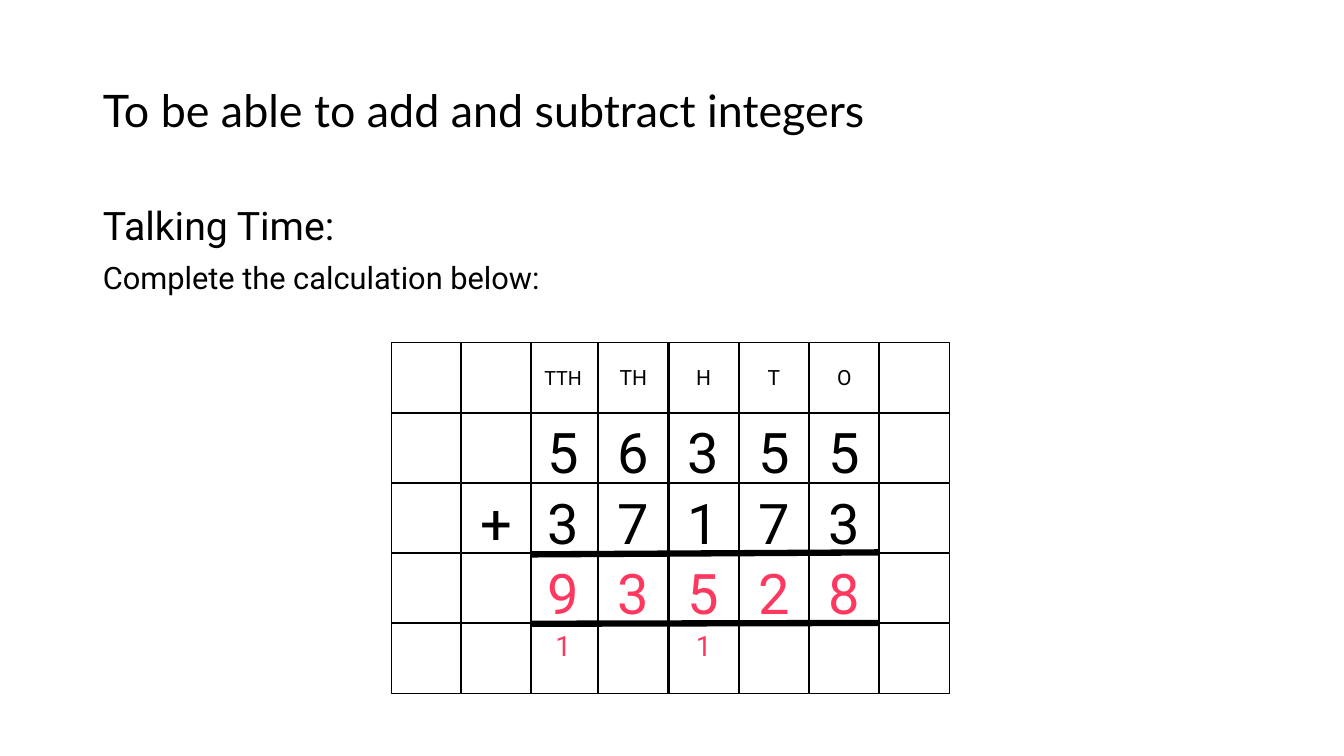
from dataclasses import dataclass

from lxml import etree
from pptx import Presentation
from pptx.dml.color import RGBColor
from pptx.enum.shapes import MSO_CONNECTOR, MSO_SHAPE
from pptx.enum.text import MSO_ANCHOR, MSO_AUTO_SIZE, PP_ALIGN
from pptx.oxml.ns import qn
from pptx.util import Inches, Pt

LEFT, CENTER = PP_ALIGN.LEFT, PP_ALIGN.CENTER
TOP, MIDDLE = MSO_ANCHOR.TOP, MSO_ANCHOR.MIDDLE
RECTANGLE, STRAIGHT = MSO_SHAPE.RECTANGLE, MSO_CONNECTOR.STRAIGHT
NO_AUTOFIT = MSO_AUTO_SIZE.NONE

TITLE = "To be able to add and subtract integers"
HEADING = "Talking Time:"
INSTRUCTION = "Complete the calculation below:"
MARGIN_COLUMNS = [["", ""], ["", ""], ["", "+"], ["", ""], ["", ""]]
PLACE_COLUMNS = [
    ["TTH", "TH", "H", "T", "O", ""],
    ["5", "6", "3", "5", "5", ""],
    ["3", "7", "1", "7", "3", ""],
    ["9", "3", "5", "2", "8", ""],
    ["1", "", "1", "", "", ""],
]
RULES = [((4.58, 6.19), (8.72, 6.18)), ((5.24, 5.5), (8.72, 5.48))]

TITLE_AREA = (0.92, 0.4, 9.6, 1.45)
BODY_AREA = (0.92, 2, 11.5, 4.76)
MARGIN_LEFT, PLACE_LEFT, GRID_TOP = 3.88, 5.24, 3.4
PITCH, CELL = 0.697, 0.69


@dataclass(frozen=True)
class Theme:
    title_font: str = "Lato"
    font: str = "Roboto"
    ink: RGBColor = RGBColor(0x00, 0x00, 0x00)
    paper: RGBColor = RGBColor(0xFF, 0xFF, 0xFF)
    answer: RGBColor = RGBColor(0xFF, 0x38, 0x60)
    title_size: float = 32
    heading_size: float = 28
    instruction_size: float = 22
    wide_label_size: float = 14
    label_size: float = 15
    digit_size: float = 40
    carry_size: float = 20
    cell_line: float = 1
    rule_line: float = 4.5


THEME = Theme()
ROW_FORMATS = [
    dict(size=THEME.label_size, anchor=MIDDLE),
    dict(size=THEME.digit_size),
    dict(size=THEME.digit_size),
    dict(size=THEME.digit_size, color=THEME.answer),
    dict(size=THEME.carry_size, color=THEME.answer),
]


def write(frame, text, size, font=THEME.font, color=THEME.ink, align=CENTER,
          anchor=TOP, spacing=1.0, before=0, add=False):
    frame.word_wrap = True
    frame.auto_size = NO_AUTOFIT
    frame.vertical_anchor = anchor
    para = frame.add_paragraph() if add else frame.paragraphs[0]
    para.alignment = align
    para.line_spacing = spacing
    para.space_before = Pt(before)
    span = para.add_run()
    span.text = text
    span.font.size = Pt(size)
    span.font.name = font
    span.font.color.rgb = color
    return para


def place(box, area):
    box.left, box.top, box.width, box.height = map(Inches, area)


def remove_bullet(para):
    properties = para._p.get_or_add_pPr()
    properties.set("marL", "0")
    properties.set("indent", "0")
    etree.SubElement(properties, qn("a:buNone"))


def draw_cells(page, rows, left):
    for column in range(len(rows[0])):
        for row, texts in enumerate(rows):
            box = page.shapes.add_shape(
                RECTANGLE, Inches(left + column * PITCH),
                Inches(GRID_TOP + row * PITCH), Inches(CELL), Inches(CELL))
            box.shadow.inherit = False
            box.fill.solid()
            box.fill.fore_color.rgb = THEME.paper
            box.line.color.rgb = THEME.ink
            box.line.width = Pt(THEME.cell_line)
            text = texts[column]
            if text:
                style = dict(ROW_FORMATS[row])
                if len(text) > 2:
                    style["size"] = THEME.wide_label_size
                write(box.text_frame, text, **style)


def draw_rule(page, start, end):
    rule = page.shapes.add_connector(STRAIGHT, *map(Inches, start + end))
    rule.line.color.rgb = THEME.ink
    rule.line.width = Pt(THEME.rule_line)
    etree.SubElement(rule._element.spPr, qn("a:effectLst"))


def main():
    deck = Presentation()
    deck.slide_width, deck.slide_height = Inches(13.33), Inches(7.5)
    page = deck.slides.add_slide(deck.slide_layouts[1])

    title, body = page.shapes.title, page.placeholders[1]
    place(title, TITLE_AREA)
    write(title.text_frame, TITLE, THEME.title_size, font=THEME.title_font,
          align=LEFT, anchor=MIDDLE, spacing=0.9)
    place(body, BODY_AREA)
    remove_bullet(write(body.text_frame, HEADING, THEME.heading_size,
                        align=LEFT, spacing=0.9))
    remove_bullet(write(body.text_frame, INSTRUCTION, THEME.instruction_size,
                        align=LEFT, spacing=0.9, before=10, add=True))

    draw_cells(page, PLACE_COLUMNS, PLACE_LEFT)
    for start, end in RULES:
        draw_rule(page, start, end)
    draw_cells(page, MARGIN_COLUMNS, MARGIN_LEFT)
    deck.save("out.pptx")


if __name__ == "__main__":
    main()
